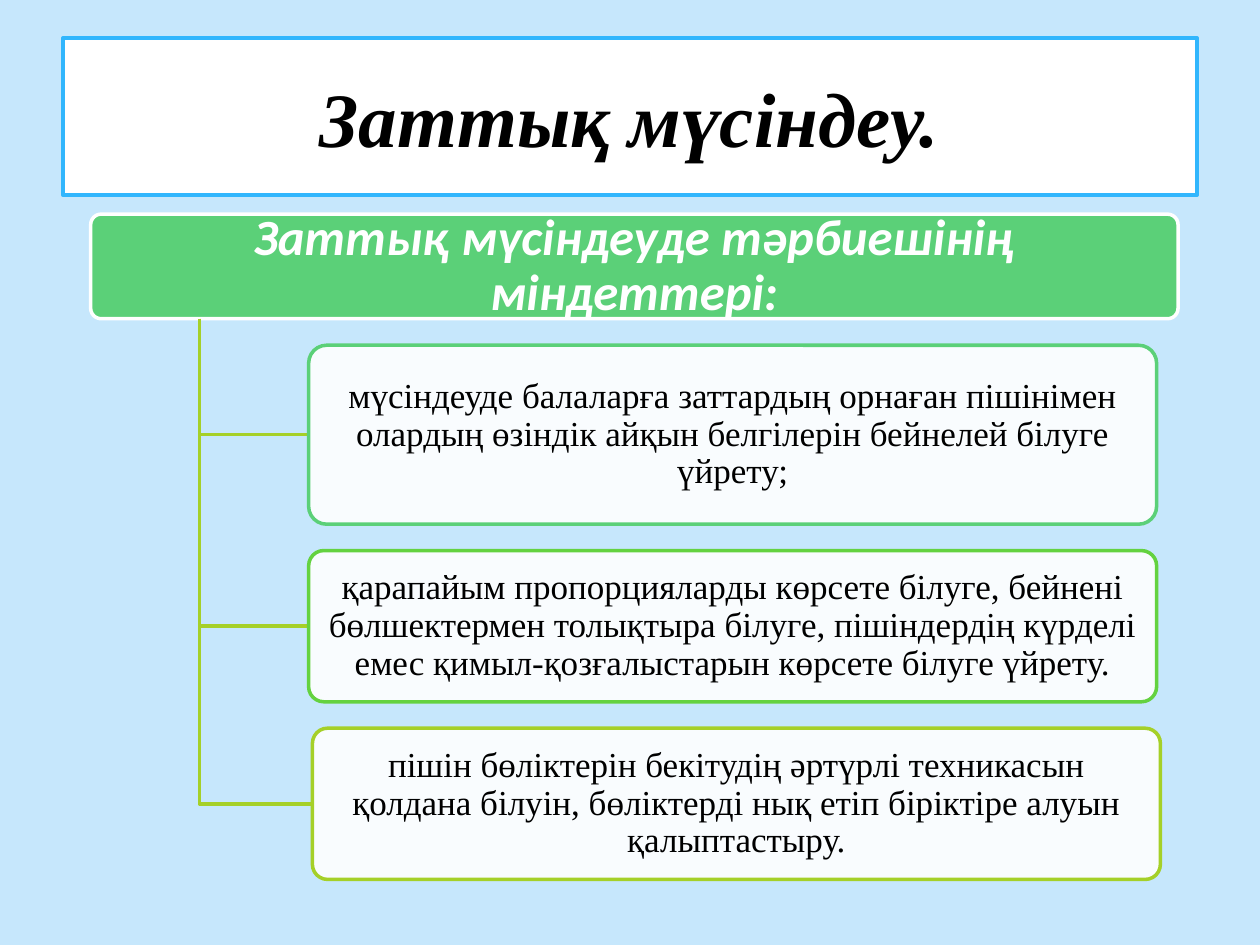
from lxml.etree import SubElement
from pptx import Presentation
from pptx.dml.color import RGBColor
from pptx.enum.shapes import MSO_SHAPE as Shape
from pptx.enum.text import MSO_ANCHOR as Anchor, PP_ALIGN as Align
from pptx.oxml.ns import qn
from pptx.util import Inches, Pt

SERIF = "Times New Roman"
LINE_WIDTH = Pt(2)
STEM_COLOR = "A5D028"

TITLE_FONT = {"name": SERIF, "size": Pt(44), "bold": True, "italic": True}
HEADING_FONT = {"name": "Calibri", "size": Pt(29), "bold": True, "italic": True}
TASK_FONT = {"name": SERIF, "size": Pt(20)}

TITLE_BOX = (0.5, 0.3, 9, 1.25)
HEADING_BOX = (0.72, 1.7, 8.63, 0.83)

# Left, top, height, outline and wording of each task
TASK_WIDTH = 6.73
TASKS = [
    (2.45, 2.74, 1.42, "5BD078",
     "мүсіндеуде балаларға заттардың орнаған пішінімен олардың өзіндік "
     "айқын белгілерін бейнелей білуге үйрету;"),
    (2.45, 4.37, 1.2, "64D240",
     "қарапайым пропорцияларды көрсете білуге, бейнені бөлшектермен "
     "толықтыра білуге, пішіндердің күрделі емес қимыл-қозғалыстарын "
     "көрсете білуге үйрету."),
    (2.48, 5.78, 1.2, "A5D028",
     "пішін бөліктерін бекітудің әртүрлі техникасын қолдана білуін, "
     "бөліктерді нық етіп біріктіре алуын қалыптастыру."),
]


def rgb(color):
    return RGBColor.from_string(color)


def set_fill(shape, color, opacity=100):
    shape.fill.solid()
    shape.fill.fore_color.rgb = rgb(color)
    if opacity < 100:
        tint = shape.fill._xPr.find(qn("a:solidFill"))[0]
        SubElement(tint, qn("a:alpha"), val=str(opacity * 1000))


def set_outline(shape, color):
    shape.shadow.inherit = False
    shape.line.color.rgb = rgb(color)
    shape.line.width = LINE_WIDTH


def write_text(shape, wording, font, color, inset_x, inset_y, spacing):
    frame = shape.text_frame
    layout = {
        "word_wrap": True, "vertical_anchor": Anchor.MIDDLE,
        "margin_left": Inches(inset_x), "margin_right": Inches(inset_x),
        "margin_top": Inches(inset_y), "margin_bottom": Inches(inset_y),
    }
    for name, value in layout.items():
        setattr(frame, name, value)
    paragraph = frame.paragraphs[0]
    paragraph.alignment = Align.CENTER
    paragraph.line_spacing = spacing
    run = paragraph.add_run()
    run.text = wording
    for name, value in font.items():
        setattr(run.font, name, value)
    run.font.color.rgb = rgb(color)


def add_panel(slide, box, kind, fill, outline, opacity=100):
    panel = slide.shapes.add_shape(kind, *map(Inches, box))
    if kind == Shape.ROUNDED_RECTANGLE:
        panel.adjustments[0] = 0.1
    set_fill(panel, fill, opacity)
    set_outline(panel, outline)
    return panel


def add_title(slide, box):
    panel = add_panel(slide, box, Shape.RECTANGLE, "FFFFFF", "31B6FD")
    write_text(panel, "Заттық мүсіндеу.", TITLE_FONT, "000000", 0.1, 0.05, 1.0)


def add_heading(slide, box):
    panel = add_panel(slide, box, Shape.ROUNDED_RECTANGLE, "5BD078", "FFFFFF")
    write_text(panel, "Заттық мүсіндеуде тәрбиешінің міндеттері:",
               HEADING_FONT, "FFFFFF", 0.09, 0.07, 0.9)


def add_branch(slide, heading_box, task_box):
    """Elbow from the heading's lower edge to the middle of a task's left side."""
    left, top, width, height = heading_box
    stem_x, stem_y = Inches(left + width / 10), Inches(top + height)
    task_x, task_y = Inches(task_box[0]), Inches(task_box[1] + task_box[3] / 2)
    builder = slide.shapes.build_freeform(stem_x, stem_y)
    builder.add_line_segments([(stem_x, task_y), (task_x, task_y)], close=False)
    branch = builder.convert_to_shape()
    branch.fill.background()
    set_outline(branch, STEM_COLOR)


def add_task(slide, box, outline, wording):
    panel = add_panel(slide, box, Shape.ROUNDED_RECTANGLE, "FFFFFF", outline, 90)
    write_text(panel, wording, TASK_FONT, "000000", 0.08, 0.07, 0.9)


def main():
    prs = Presentation()
    prs.slide_width, prs.slide_height = Inches(10), Inches(7.5)
    slide = prs.slides.add_slide(prs.slide_layouts[6])
    set_fill(slide.background, "C6E7FC")

    # Title and heading
    add_title(slide, TITLE_BOX)
    add_heading(slide, HEADING_BOX)

    # Tasks hanging from the heading
    for left, top, height, outline, wording in TASKS:
        task_box = (left, top, TASK_WIDTH, height)
        add_branch(slide, HEADING_BOX, task_box)
        add_task(slide, task_box, outline, wording)

    prs.save("out.pptx")


if __name__ == "__main__":
    main()
